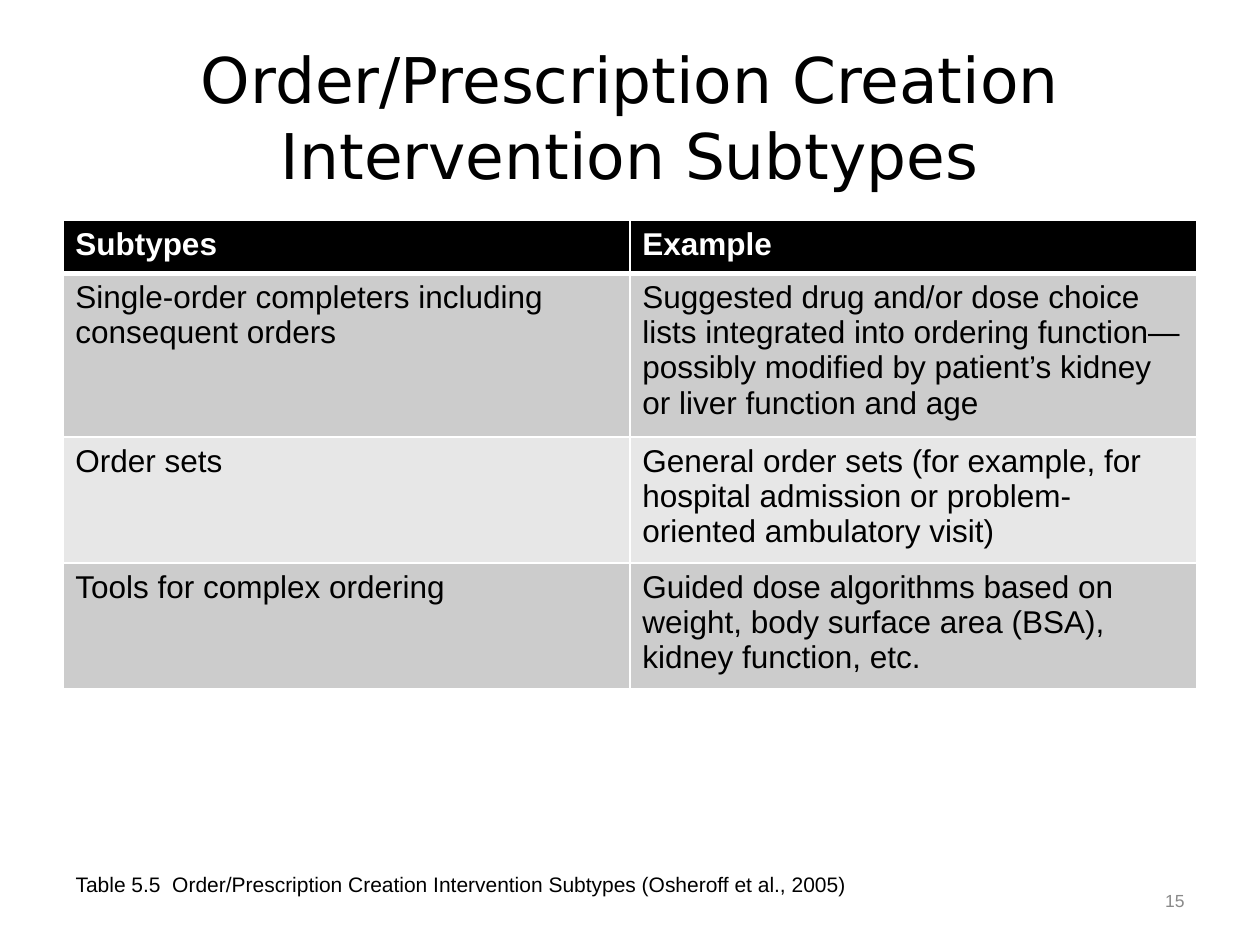
from lxml.etree import SubElement
from pptx import Presentation
from pptx.dml.color import RGBColor
from pptx.enum.text import MSO_ANCHOR, PP_ALIGN
from pptx.oxml import parse_xml
from pptx.oxml.ns import nsdecls, qn
from pptx.util import Cm, Pt


def tint(code):
    return RGBColor.from_string(code)


def write(frame, text, color, look, align=PP_ALIGN.LEFT):
    frame.word_wrap = True
    para = frame.paragraphs[0]
    para.alignment = align
    para.space_before = Pt(0)
    run = para.add_run()
    run.text = text
    for name, value in look.items():
        setattr(run.font, name, value)
    run.font.color.rgb = tint(color)
    return para


deck = Presentation()
deck.slide_width, deck.slide_height = Cm(25.4), Cm(19.05)
slide = deck.slides.add_slide(deck.slide_layouts[1])
left, wide = Cm(1.27), Cm(22.86)

# Title
title = slide.shapes.title
spot = {"left": left, "top": Cm(0.76), "width": wide, "height": Cm(3.18)}
for name, value in spot.items():
    setattr(title, name, value)
title.text_frame.vertical_anchor = MSO_ANCHOR.MIDDLE
write(title.text_frame, "Order/Prescription Creation Intervention Subtypes",
      "000000", {"name": "DejaVu Sans", "size": Pt(36)}, PP_ALIGN.CENTER)

# Table of subtypes
rows = [
    ("Subtypes", "Example"),
    ("Single-order completers including consequent orders",
     "Suggested drug and/or dose choice lists integrated into ordering "
     "function—possibly modified by patient’s kidney or liver function and age"),
    ("Order sets",
     "General order sets (for example, for hospital admission or "
     "problem-oriented ambulatory visit)"),
    ("Tools for complex ordering",
     "Guided dose algorithms based on weight, body surface area (BSA), "
     "kidney function, etc."),
]
highs = [Cm(1.06), Cm(3.3), Cm(2.54), Cm(2.54)]
fills = ["000000", "CCCCCC", "E7E7E7", "CCCCCC"]
grid = slide.shapes.add_table(len(rows), 2, left, Cm(4.45), wide, sum(highs)).table

for r, (row, high, fill) in enumerate(zip(rows, highs, fills)):
    grid.rows[r].height = high
    head = r == 0
    for c, text in enumerate(row):
        cell = grid.cell(r, c)
        cell.margin_left = cell.margin_right = Cm(0.25)
        cell.margin_top = cell.margin_bottom = Cm(0.13)
        cell.fill.solid()
        cell.fill.fore_color.rgb = tint(fill)
        write(cell.text_frame, text, "FFFFFF" if head else "000000",
              {"name": "Arial", "size": Pt(18), "bold": head})
        # White rules, thicker under the header
        edges = {"L": 1, "R": 1, "T": 3 if r == 1 else 1, "B": 3 if head else 1}
        props = cell._tc.get_or_add_tcPr()
        for i, (side, thick) in enumerate(edges.items()):
            props.insert(i, parse_xml(
                f'<a:ln{side} {nsdecls("a")} w="{Pt(thick)}"><a:solidFill>'
                f'<a:srgbClr val="FFFFFF"/></a:solidFill></a:ln{side}>'))

# Caption without bullet
note = slide.placeholders[1]
spot = {"left": left, "top": Cm(17.45), "width": Cm(21.2), "height": Cm(1.47)}
for name, value in spot.items():
    setattr(note, name, value)
para = write(note.text_frame,
             "Table 5.5  Order/Prescription Creation Intervention Subtypes "
             "(Osheroff et al., 2005)",
             "000000", {"name": "Arial", "size": Pt(12)})
props = para._p.get_or_add_pPr()
props.set("marL", "0")
props.set("indent", "0")
SubElement(props, qn("a:buNone"))

# Page number
page = slide.shapes.add_textbox(Cm(22.71), Cm(17.4), Cm(1.42), Cm(1.52))
page.text_frame.vertical_anchor = MSO_ANCHOR.MIDDLE
write(page.text_frame, "15", "898989", {"name": "Arial", "size": Pt(10)},
      PP_ALIGN.RIGHT)

deck.save("out.pptx")
